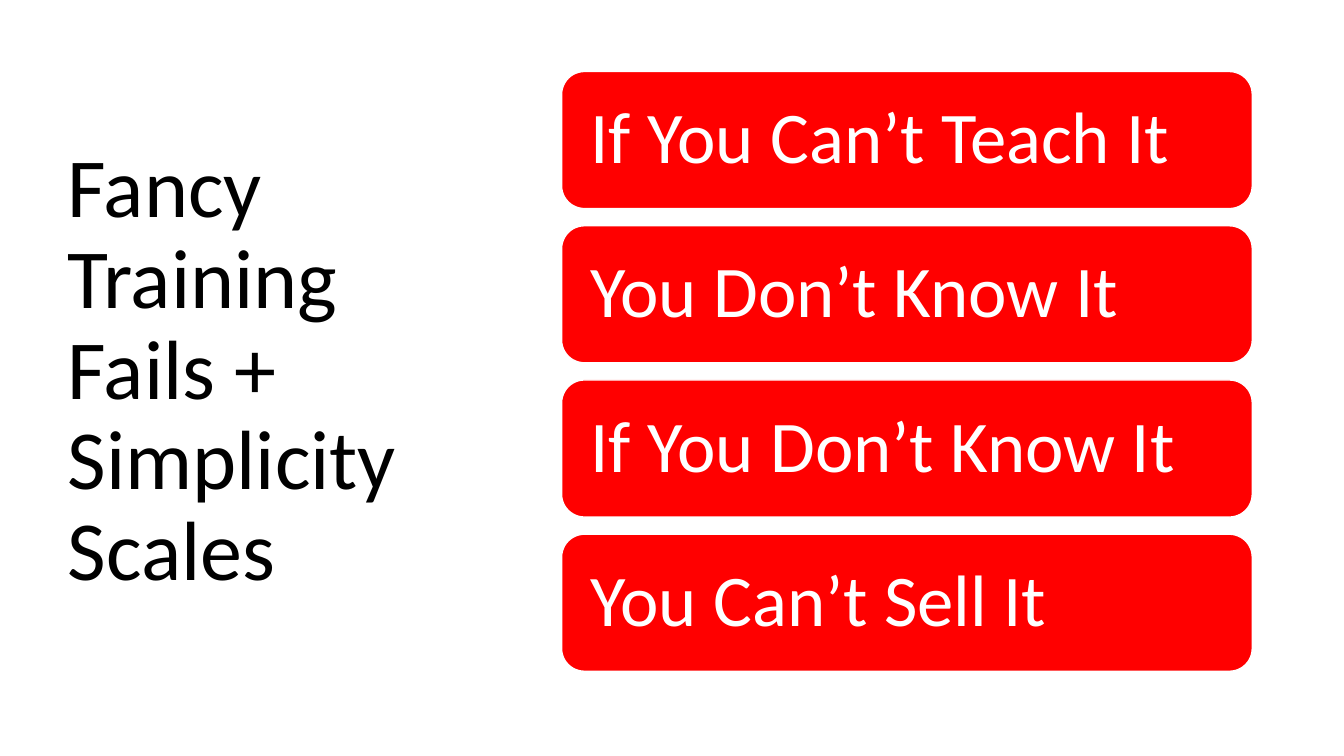
from pptx import Presentation
from pptx.dml.color import RGBColor
from pptx.enum.shapes import MSO_SHAPE
from pptx.enum.text import MSO_ANCHOR, MSO_AUTO_SIZE, PP_ALIGN
from pptx.util import Inches, Pt

RED = RGBColor(0xFF, 0x00, 0x00)
WHITE = RGBColor(0xFF, 0xFF, 0xFF)
BLACK = RGBColor(0x00, 0x00, 0x00)
ROUND = MSO_SHAPE.ROUNDED_RECTANGLE
MIDDLE = MSO_ANCHOR.MIDDLE
FIXED = MSO_AUTO_SIZE.NONE
LEFT = PP_ALIGN.LEFT

TITLE = "Fancy Training Fails + Simplicity Scales"
RULES = [
    "If You Can’t Teach It",
    "You Don’t Know It",
    "If You Don’t Know It",
    "You Can’t Sell It",
]
TOP = 0.71
STEP = 1.53


def write(shape, text, *, font, size, color, side, edge):
    frame = shape.text_frame
    frame.word_wrap = True
    frame.auto_size = FIXED
    frame.vertical_anchor = MIDDLE
    frame.margin_left = frame.margin_right = Inches(side)
    frame.margin_top = frame.margin_bottom = Inches(edge)
    para = frame.paragraphs[0]
    para.alignment = LEFT
    para.line_spacing = 0.9
    run = para.add_run()
    run.text = text
    run.font.name = font
    run.font.size = Pt(size)
    run.font.color.rgb = color


class Board:
    font = "Calibri"

    def __init__(self, deck):
        self.slide = deck.slides.add_slide(deck.slide_layouts[5])

    def title(self, text, left, top, width, height):
        shape = self.slide.shapes.title
        shape.left, shape.top = Inches(left), Inches(top)
        shape.width, shape.height = Inches(width), Inches(height)
        write(shape, text, font=self.font, size=60, color=BLACK,
              side=0.1, edge=0.05)

    def card(self, text, left, top, width, height):
        shape = self.slide.shapes.add_shape(
            ROUND, Inches(left), Inches(top), Inches(width), Inches(height))
        shape.shadow.inherit = False
        shape.fill.solid()
        shape.fill.fore_color.rgb = RED
        shape.line.color.rgb = WHITE
        shape.line.width = Pt(1)
        write(shape, text, font=self.font, size=52, color=WHITE,
              side=0.22, edge=0.22)


def main():
    deck = Presentation()
    deck.slide_width = Inches(13.33)
    deck.slide_height = Inches(7.5)
    board = Board(deck)
    board.title(TITLE, 0.57, 0.68, 4.16, 6.02)
    for row, rule in enumerate(RULES):
        board.card(rule, 5.57, TOP + row * STEP, 6.85, 1.36)
    deck.save("out.pptx")


if __name__ == "__main__":
    main()
